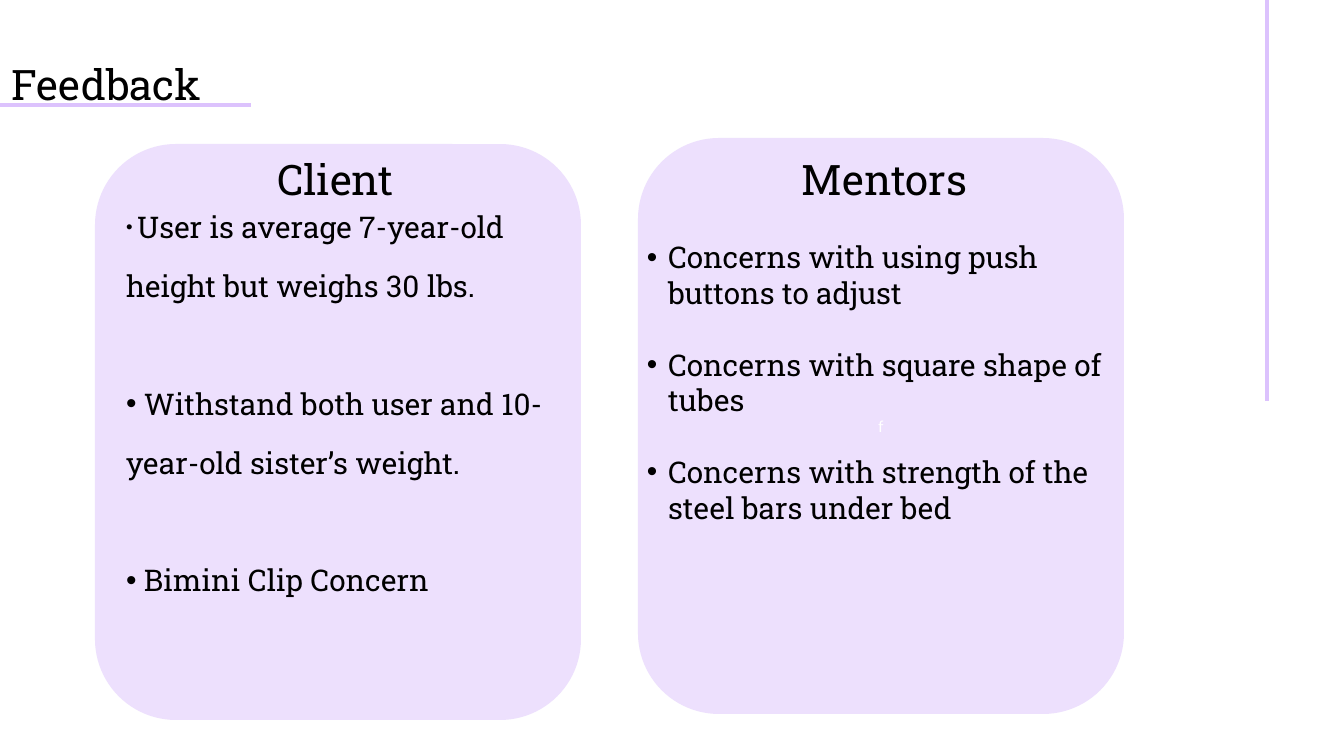
from dataclasses import dataclass

from lxml.etree import SubElement
from pptx import Presentation
from pptx.dml.color import RGBColor
from pptx.enum.shapes import MSO_CONNECTOR, MSO_SHAPE
from pptx.enum.text import MSO_ANCHOR, MSO_AUTO_SIZE, PP_ALIGN
from pptx.oxml.ns import qn
from pptx.util import Inches, Pt

PX = Inches(1) / 67.2


@dataclass(frozen=True)
class Theme:
    font: str = "Roboto Slab"
    text: RGBColor = RGBColor(0, 0, 0)
    white: RGBColor = RGBColor(255, 255, 255)
    card: RGBColor = RGBColor(0xED, 0xE0, 0xFD)
    accent: RGBColor = RGBColor(0xDC, 0xC2, 0xFD)
    heading_size: int = 45
    body_size: int = 32
    small_size: int = 20
    label_size: int = 18
    leading: int = 63
    rule_width: float = 3.75


THEME = Theme()

# Content; boxes are left, top, width, height in px
TITLE = "Feedback"
TITLE_BOX = (11, 50, 228, 55)
CARDS = [
    {
        "heading": "Client",
        "items": [
            " User is average 7-year-old height but weighs 30 lbs.",
            " Withstand both user and 10-year-old sister’s weight.",
            " Bimini Clip Concern",
        ],
        "card": (95, 144, 486, 576),
        "heading_box": (73, 145, 525, 55),
        "list_box": (126, 186, 425, 430),
        "leading": Pt(THEME.leading), "gap": THEME.leading, "indent": 0,
        "label": "",
    },
    {
        "heading": "Mentors",
        "items": [
            "Concerns with using push buttons to adjust",
            "Concerns with square shape of tubes",
            "Concerns with strength of the steel bars under bed",
        ],
        "card": (638, 138, 486, 576),
        "heading_box": (622, 145, 525, 55),
        "list_box": (647, 239, 470, 290),
        "leading": 1.0, "gap": 38, "indent": 21,
        "label": "f",
    },
]
RULES = [(1267, -2, 1267, 401), (0, 105, 251, 105)]  # from x, y to x, y


def px(*lengths):
    return [round(length * PX) for length in lengths]


def style(paragraph, size, color=THEME.text, align=PP_ALIGN.LEFT, leading=1.0, before=0):
    font = paragraph.font
    font.name, font.size, font.bold = THEME.font, Pt(size), False
    font.color.rgb = color
    paragraph.alignment = align
    paragraph.line_spacing = leading
    paragraph.space_before, paragraph.space_after = Pt(before), Pt(0)


def place(shape, box):
    """Move a placeholder and return its cleared-down text frame."""
    shape.left, shape.top, shape.width, shape.height = px(*box)
    frame = shape.text_frame
    frame.word_wrap = True
    frame.auto_size = MSO_AUTO_SIZE.NONE
    frame.vertical_anchor = MSO_ANCHOR.TOP
    frame.margin_left = frame.margin_right = frame.margin_top = frame.margin_bottom = 0
    return frame


def fill_heading(shape, text, box, align):
    frame = place(shape, box)
    frame.text = text
    style(frame.paragraphs[0], THEME.heading_size, align=align, leading=Pt(THEME.leading))


def fill_list(shape, card):
    frame = place(shape, card["list_box"])
    frame.text = "\n".join(card["items"])
    indent, = px(card["indent"])
    for index, paragraph in enumerate(frame.paragraphs):
        style(paragraph, THEME.body_size, leading=card["leading"],
              before=card["gap"] if index else 0)
        properties = paragraph._p.get_or_add_pPr()
        properties.set("marL", str(indent))
        properties.set("indent", str(-indent))
        bullet = properties.makeelement(qn("a:buChar"), {"char": "•"})
        properties.insert_element_before(bullet, "a:tabLst", "a:defRPr", "a:extLst")


def add_card(slide, card):
    shape = slide.shapes.add_shape(MSO_SHAPE.ROUNDED_RECTANGLE, *px(*card["card"]))
    shape.shadow.inherit = False
    shape.fill.solid()
    shape.fill.fore_color.rgb = THEME.card
    shape.line.fill.background()
    if card["label"]:
        shape.text_frame.text = card["label"]
        paragraph = shape.text_frame.paragraphs[0]
        paragraph.alignment = PP_ALIGN.CENTER
        paragraph.font.size = Pt(THEME.label_size)
        paragraph.font.color.rgb = THEME.white
    slide.shapes._spTree.insert(2, shape._element)  # behind the placeholders


def add_rule(slide, ends):
    rule = slide.shapes.add_connector(MSO_CONNECTOR.STRAIGHT, *px(*ends))
    rule.line.color.rgb = THEME.accent
    rule.line.width = Pt(THEME.rule_width)
    SubElement(rule._element.spPr, qn("a:effectLst"))


def main():
    presentation = Presentation()
    presentation.slide_width, presentation.slide_height = Inches(20), Inches(11.25)
    comparison = presentation.slide_layouts[4]
    slide = presentation.slides.add_slide(comparison)
    title, *parts = slide.placeholders

    fill_heading(title, TITLE, TITLE_BOX, PP_ALIGN.LEFT)
    for ends in RULES:
        add_rule(slide, ends)

    # Each card takes a heading and a list placeholder
    for card, heading, body in zip(CARDS, parts[::2], parts[1::2]):
        add_card(slide, card)
        fill_heading(heading, card["heading"], card["heading_box"], PP_ALIGN.CENTER)
        fill_list(body, card)

    # The first client item opens with a smaller bullet
    first = parts[1].text_frame.paragraphs[0]
    text = first.runs[0].text
    first.runs[0].text = text[:1]
    first.runs[0].font.size = Pt(THEME.small_size)
    first.add_run().text = text[1:]

    presentation.save("out.pptx")


if __name__ == "__main__":
    main()
